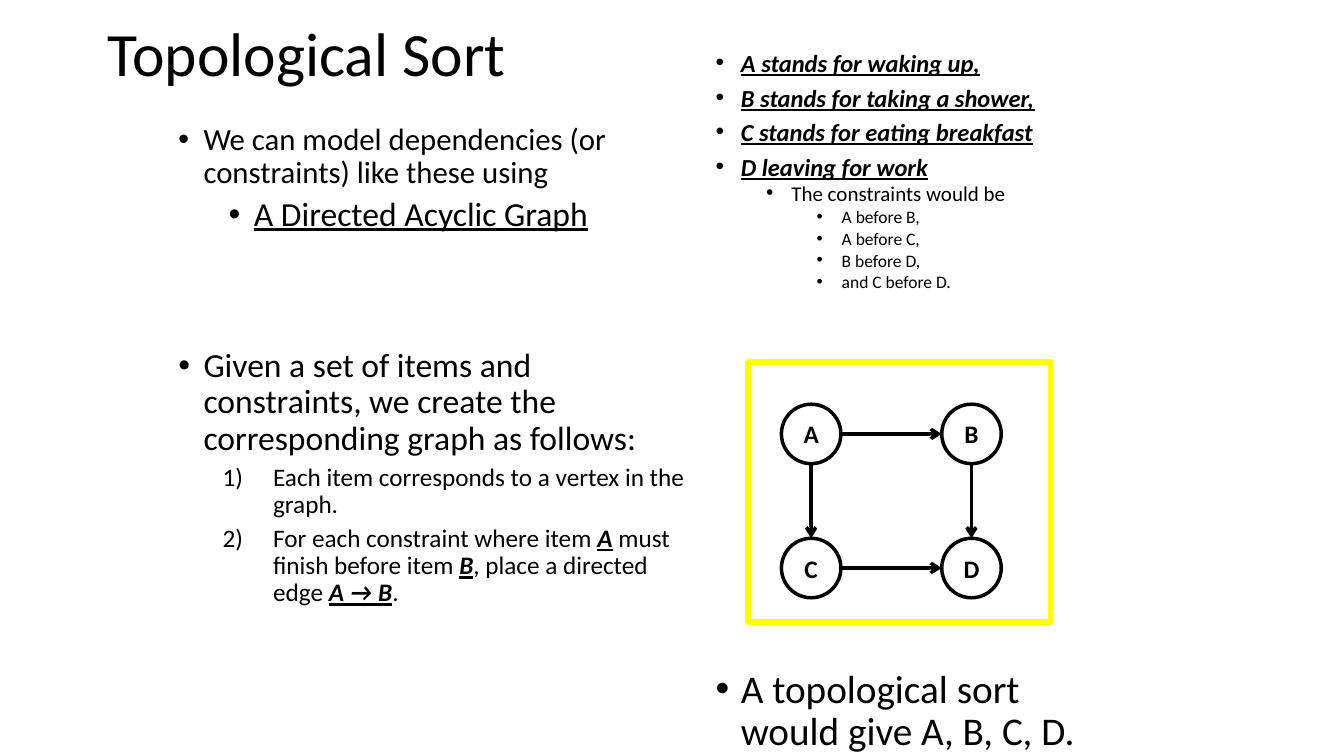
from lxml.etree import SubElement
from pptx import Presentation
from pptx.dml.color import RGBColor
from pptx.enum.shapes import MSO_CONNECTOR, MSO_SHAPE
from pptx.enum.text import MSO_ANCHOR, PP_ALIGN
from pptx.oxml.ns import qn
from pptx.util import Inches, Pt

BLACK, YELLOW = "000000", "FFFF00"
STRONG = {"bold": True, "italic": True, "underline": True}
UNDERLINED = {"underline": True}


def color(hex_value):
    return RGBColor.from_string(hex_value)


def add_run(paragraph, text, size, **formats):
    run = paragraph.add_run()
    run.text = text
    for name, value in {"name": "Calibri", "size": Pt(size), **formats}.items():
        setattr(run.font, name, value)
    run.font.color.rgb = color(BLACK)


def add_bullet(paragraph, indent, hanging, numbered):
    properties = paragraph._p.get_or_add_pPr()
    properties.set("marL", str(Inches(indent)))
    properties.set("indent", str(-Inches(hanging)))
    if numbered:
        SubElement(properties, qn("a:buAutoNum"), type="arabicParenR")
    else:
        SubElement(properties, qn("a:buFont"), typeface="Arial")
        SubElement(properties, qn("a:buChar"), char="•")


def add_title(slide, box, text):
    frame = slide.shapes.add_textbox(*map(Inches, box)).text_frame
    frame.word_wrap = True
    frame.vertical_anchor = MSO_ANCHOR.MIDDLE
    frame.paragraphs[0].line_spacing = 0.9
    add_run(frame.paragraphs[0], text, 44)


def add_bullet_list(slide, box, items, line_spacing=0.9):
    """Each item: level, size, [(text, formats)], and optional settings."""
    frame = slide.shapes.add_textbox(*map(Inches, box)).text_frame
    frame.word_wrap = True
    for index, (level, size, runs, *settings) in enumerate(items):
        options = settings[0] if settings else {}
        numbered = options.get("numbered", False)
        paragraph = frame.add_paragraph() if index else frame.paragraphs[0]
        paragraph.level = level
        paragraph.line_spacing = line_spacing
        if index:
            paragraph.space_before = Pt(options.get("before", 5 if level else 10))
        if numbered:
            add_bullet(paragraph, 0.94, 0.5, True)
        else:
            add_bullet(paragraph, 0.25 + 0.5 * level, 0.25, False)
        for text, formats in runs:
            add_run(paragraph, text, size, **formats)


def add_vertex(slide, left, top, diameter, label):
    vertex = slide.shapes.add_shape(
        MSO_SHAPE.OVAL, *map(Inches, (left, top, diameter, diameter)))
    vertex.shadow.inherit = False
    vertex.fill.background()
    vertex.line.color.rgb = color(BLACK)
    vertex.line.width = Pt(2.5)
    frame = vertex.text_frame
    frame.word_wrap = False
    frame.vertical_anchor = MSO_ANCHOR.MIDDLE
    frame.paragraphs[0].alignment = PP_ALIGN.CENTER
    add_run(frame.paragraphs[0], label, 18, bold=True)


def add_edge(slide, start, end):
    edge = slide.shapes.add_connector(
        MSO_CONNECTOR.STRAIGHT, *map(Inches, (*start, *end)))
    edge.line.color.rgb = color(BLACK)
    edge.line.width = Pt(2.5)
    SubElement(edge.line._get_or_add_ln(), qn("a:tailEnd"), type="arrow")
    SubElement(edge._element.spPr, qn("a:effectLst"))


def add_graph(slide, box):
    left, top, width, height = box
    diameter, column_step, row_step = 0.59, 1.59, 1.33
    radius = diameter / 2
    centers = {}

    # Vertices on a two by two grid
    for index, label in enumerate("ABCD"):
        row, column = divmod(index, 2)
        x = left + 0.33 + column * column_step
        y = top + 0.42 + row * row_step
        centers[label] = (x + radius, y + radius)
        add_vertex(slide, x, y, diameter, label)

    # Constraints as directed edges
    for before, after in ("AB", "AC", "BD", "CD"):
        (x1, y1), (x2, y2) = centers[before], centers[after]
        if y1 == y2:
            add_edge(slide, (x1 + radius, y1), (x2 - radius, y2))
        else:
            add_edge(slide, (x1, y1 + radius), (x2, y2 - radius))

    # Frame
    frame = slide.shapes.add_shape(
        MSO_SHAPE.RECTANGLE, *map(Inches, (left, top, width, height)))
    frame.shadow.inherit = False
    frame.fill.background()
    frame.line.color.rgb = color(YELLOW)
    frame.line.width = Pt(4)


def main():
    presentation = Presentation()
    presentation.slide_width = Inches(13.33)
    presentation.slide_height = Inches(7.5)
    slide = presentation.slides.add_slide(presentation.slide_layouts[6])

    add_title(slide, (0.97, 0.17, 8.2, 0.79), "Topological Sort")

    # Modelling with a graph
    add_bullet_list(slide, (1.67, 1.18, 5.25, 6.3), [
        (0, 22, [("We can model dependencies (or constraints) like these using", {})]),
        (1, 24, [("A Directed Acyclic Graph", UNDERLINED)]),
        (0, 24, [("Given a set of items and constraints, we create the "
                  "corresponding graph as follows:", {})], {"before": 82}),
        (1, 18, [("Each item corresponds to a vertex in the graph.", {})],
         {"numbered": True}),
        (1, 18, [("For each constraint where item ", {}), ("A", STRONG),
                 (" must finish before item ", {}), ("B", STRONG),
                 (", place a directed edge ", {}), ("A → B", STRONG), (".", {})],
         {"numbered": True}),
    ])

    # Example items and constraints
    tasks = ["A stands for waking up,", "B stands for taking a shower,",
             "C stands for eating breakfast", "D leaving for work"]
    constraints = ["A before B,", "A before C,", "B before D,", "and C before D."]
    add_bullet_list(
        slide, (7, 0.51, 3.75, 3.08),
        [(0, 17.5, [(task, STRONG)]) for task in tasks]
        + [(1, 15, [("The constraints would be", {})])]
        + [(2, 12.5, [(constraint, {})]) for constraint in constraints],
        line_spacing=0.7)

    add_graph(slide, (7.42, 3.59, 3, 2.58))

    # Result
    add_bullet_list(slide, (7, 6.59, 3.83, 0.9), [
        (0, 28, [("A topological sort would give A, B, C, D.", {})])])

    presentation.save("out.pptx")


if __name__ == "__main__":
    main()
